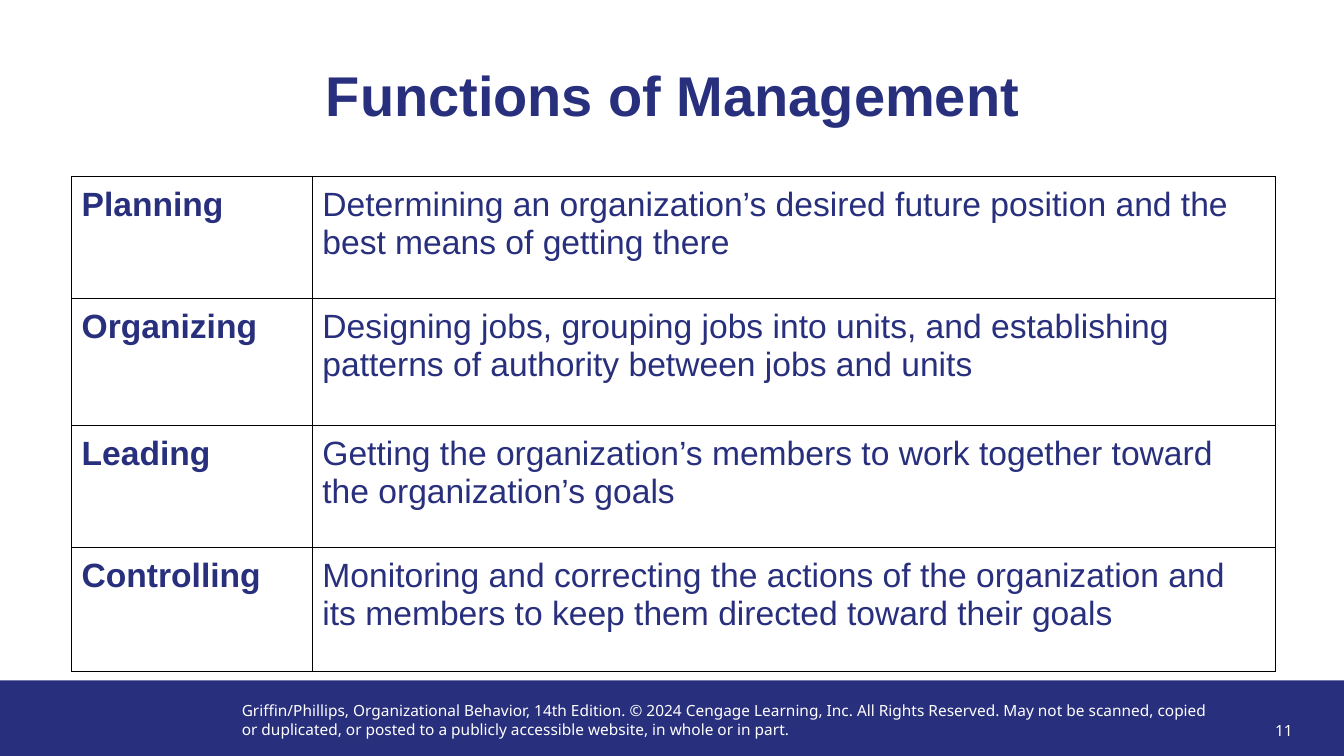
from lxml import etree
from pptx import Presentation
from pptx import util as u
from pptx.dml.color import RGBColor
from pptx.enum import shapes, text
from pptx.oxml.ns import qn

NAVY = RGBColor(0x28, 0x2F, 0x7C)
WHITE = RGBColor(0xFF, 0xFF, 0xFF)
BLACK = RGBColor(0, 0, 0)

WIDTH, HEIGHT = u.Inches(13.33), u.Inches(7.5)
BAND_TOP = 0.9  # share of the slide's height
TABLE_BOX = (0.71, 1.75, 11.94, 4.91)
COLUMNS = (0.2, 0.8)  # shares of the table's width
ROWS = (1.21, 1.26, 1.21, 1.23)

FUNCTIONS = [
    ("Planning", "Determining an organization’s desired future position "
                 "and the best means of getting there"),
    ("Organizing", "Designing jobs, grouping jobs into units, and "
                   "establishing patterns of authority between jobs and units"),
    ("Leading", "Getting the organization’s members to work together "
                "toward the organization’s goals"),
    ("Controlling", "Monitoring and correcting the actions of the organization "
                    "and its members to keep them directed toward their goals"),
]
COPYRIGHT = ("Griffin/Phillips, Organizational Behavior, 14th Edition. "
             "© 2024 Cengage Learning, Inc. All Rights Reserved. May not be "
             "scanned, copied or duplicated, or posted to a publicly "
             "accessible website, in whole or in part.")


def set_font(p, name, size, color, bold=False):
    p.font.name = name
    p.font.size = u.Pt(size)
    p.font.color.rgb = color
    p.font.bold = bold


def add_text(s, box, words, font, align=text.PP_ALIGN.LEFT,
             anchor=text.MSO_ANCHOR.MIDDLE):
    tf = s.shapes.add_textbox(*map(u.Inches, box)).text_frame
    tf.word_wrap = True
    tf.vertical_anchor = anchor
    p = tf.paragraphs[0]
    p.text = words
    p.alignment = align
    set_font(p, *font)


def add_band(s):
    top = int(HEIGHT * BAND_TOP)
    sp = s.shapes.add_shape(shapes.MSO_SHAPE.RECTANGLE, 0, top,
                            WIDTH, HEIGHT - top)
    sp.shadow.inherit = False
    sp.fill.solid()
    sp.fill.fore_color.rgb = NAVY
    sp.line.fill.background()


def set_borders(cell, width=u.Pt(1)):
    tc_pr = cell._tc.get_or_add_tcPr()
    for side in ("a:lnL", "a:lnR", "a:lnT", "a:lnB"):
        ln = etree.SubElement(tc_pr, qn(side), w=str(width))
        fill = etree.SubElement(ln, qn("a:solidFill"))
        etree.SubElement(fill, qn("a:srgbClr"), val=str(BLACK))


def fill_cell(cell, words, bold):
    set_borders(cell)
    cell.fill.solid()
    cell.fill.fore_color.rgb = WHITE
    cell.margin_left = cell.margin_right = u.Inches(0.1)
    cell.margin_top = cell.margin_bottom = u.Inches(0.1)
    p = cell.text_frame.paragraphs[0]
    p.text = words
    set_font(p, "Arial", 24, NAVY, bold)


def add_functions_table(s):
    frame = s.shapes.add_table(len(ROWS), len(COLUMNS),
                               *map(u.Inches, TABLE_BOX))
    table = frame.table
    table.first_row = table.horz_banding = False
    for column, share in zip(table.columns, COLUMNS):
        column.width = u.Inches(TABLE_BOX[2] * share)
    for row, height, entry in zip(table.rows, ROWS, FUNCTIONS):
        row.height = u.Inches(height)
        for i, words in enumerate(entry):
            fill_cell(row.cells[i], words, bold=i == 0)


def main():
    prs = Presentation()
    prs.slide_width, prs.slide_height = WIDTH, HEIGHT
    s = prs.slides.add_slide(prs.slide_layouts[6])
    small = ("Noto Sans", 11, WHITE)
    add_band(s)
    add_text(s, (2.3, 6.91, 9.8, 0.47), COPYRIGHT, small,
             anchor=text.MSO_ANCHOR.TOP)
    add_text(s, (12.12, 7.05, 0.8, 0.4), "11", small,
             align=text.PP_ALIGN.RIGHT)
    add_text(s, (0.92, 0.4, 11.5, 1.07), "Functions of Management",
             ("Arial", 40, NAVY, True), align=text.PP_ALIGN.CENTER)
    add_functions_table(s)
    prs.save("out.pptx")


if __name__ == "__main__":
    main()
